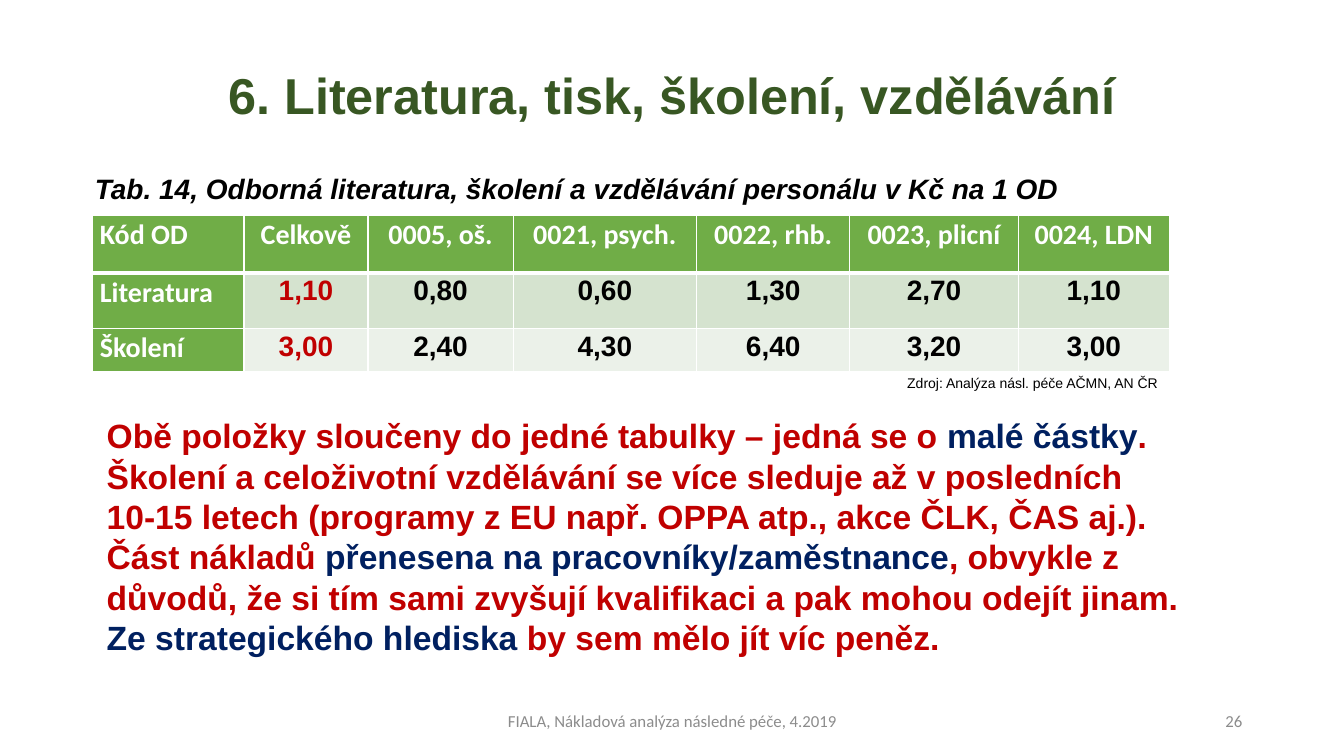
import dataclasses
import typing

import pptx
import pptx.dml.color
import pptx.enum.text
import pptx.oxml
import pptx.oxml.ns
import pptx.slide
import pptx.table
import pptx.text.text
import pptx.util

EMU_PER_PX = 9144  # 100 px to the inch
ALIGN = pptx.enum.text.PP_ALIGN
ANCHOR = pptx.enum.text.MSO_ANCHOR

COLORS = {
    "title": "385723",
    "black": "000000",
    "white": "FFFFFF",
    "red": "C00000",
    "navy": "002060",
    "grey": "8C8C8C",
    "header": "70AD47",
    "band_dark": "D5E3CF",
    "band_light": "EBF1E9",
}


@dataclasses.dataclass(frozen=True)
class Box:
    left: int
    top: int
    width: int
    height: int


@dataclasses.dataclass(frozen=True)
class Style:
    size: int
    color: str
    font: str = "Arial"
    bold: bool = False
    italic: bool = False
    align: typing.Optional[ALIGN] = ALIGN.LEFT
    line_spacing: float = 1.0


@dataclasses.dataclass(frozen=True)
class Label:
    box: Box
    text: str
    style: Style
    anchor: ANCHOR = ANCHOR.TOP
    wrap: bool = True


def px(length: int) -> pptx.util.Emu:
    return pptx.util.Emu(length * EMU_PER_PX)


def rgb(name: str) -> pptx.dml.color.RGBColor:
    return pptx.dml.color.RGBColor.from_string(COLORS[name])


def place(shape: typing.Any, box: Box) -> None:
    shape.left, shape.top = px(box.left), px(box.top)
    shape.width, shape.height = px(box.width), px(box.height)


def format_paragraph(paragraph: typing.Any, style: Style) -> None:
    paragraph.alignment = style.align
    paragraph.line_spacing = style.line_spacing
    font = paragraph.font
    font.name, font.size = style.font, pptx.util.Pt(style.size)
    font.bold, font.italic = style.bold, style.italic
    font.color.rgb = rgb(style.color)


def fill_placeholder(shape: typing.Any, label: Label) -> None:
    place(shape, label.box)
    frame = shape.text_frame
    frame.text = label.text
    frame.auto_size = pptx.enum.text.MSO_AUTO_SIZE.NONE
    frame.vertical_anchor = label.anchor
    format_paragraph(frame.paragraphs[0], label.style)


def add_text_box(slide: pptx.slide.Slide, label: Label) -> pptx.text.text.TextFrame:
    box = label.box
    shape = slide.shapes.add_textbox(px(box.left), px(box.top), px(box.width), px(box.height))
    frame = shape.text_frame
    frame.word_wrap = label.wrap
    frame.vertical_anchor = label.anchor
    frame.text = label.text
    format_paragraph(frame.paragraphs[0], label.style)
    return frame


def add_border(cell: typing.Any, side: str, points: int) -> None:
    cell._tc.get_or_add_tcPr().append(pptx.oxml.parse_xml(
        f'<a:{side} {pptx.oxml.ns.nsdecls("a")} w="{pptx.util.Pt(points)}">'
        f'<a:solidFill><a:srgbClr val="{COLORS["white"]}"/></a:solidFill></a:{side}>'))


def format_cell(cell: typing.Any, text: str, style: Style, fill: str, bottom: int) -> None:
    cell.margin_left = cell.margin_right = px(7)
    cell.margin_top = cell.margin_bottom = 0
    for side in ("lnL", "lnR", "lnT"):
        add_border(cell, side, 1)
    add_border(cell, "lnB", bottom)
    cell.fill.solid()
    cell.fill.fore_color.rgb = rgb(fill)
    cell.text = text
    format_paragraph(cell.text_frame.paragraphs[0], style)


TITLE = Label(Box(92, 40, 1150, 115), "6. Literatura, tisk, školení, vzdělávání",
              Style(36, "title", bold=True, align=ALIGN.CENTER, line_spacing=0.9), ANCHOR.MIDDLE)
CAPTION = Label(Box(84, 169, 1150, 476),
                "Tab. 14, Odborná literatura, školení a vzdělávání personálu v Kč na 1 OD",
                Style(20, "black", bold=True, italic=True, line_spacing=0.9))

TABLE_BOX = Box(92, 214, 1068, 155)
COLUMN_WIDTHS = (150, 123, 144, 182, 152, 167, 150)
ROW_HEIGHTS = (57, 55, 43)
ROW_FILLS = ("header", "band_dark", "band_light")
TABLE_ROWS = (
    ("Kód OD", "Celkově", "0005, oš.", "0021, psych.", "0022, rhb.", "0023, plicní", "0024, LDN"),
    ("Literatura", "1,10", "0,80", "0,60", "1,30", "2,70", "1,10"),
    ("Školení", "3,00", "2,40", "4,30", "6,40", "3,20", "3,00"),
)

FOOTER = Style(12, "grey", "Calibri", align=ALIGN.CENTER)
LABELS = (
    Label(Box(890, 367, 273, 27), "Zdroj: Analýza násl. péče AČMN, AN ČR",
          Style(10, "black"), wrap=False),
    Label(Box(442, 695, 450, 40), "FIALA, Nákladová analýza následné péče, 4.2019",
          FOOTER, ANCHOR.MIDDLE),
    Label(Box(942, 695, 300, 40), "26",
          dataclasses.replace(FOOTER, align=ALIGN.RIGHT), ANCHOR.MIDDLE),
)

COMMENT_BOX = Box(96, 407, 1093, 252)
COMMENT_STYLE = Style(24, "red", bold=True)
COMMENT_LINES = (
    (("Obě položky sloučeny do jedné tabulky – jedná se o ", "red"),
     ("malé částky", "navy"), (".", "red")),
    (("Školení a celoživotní vzdělávání se více sleduje až v posledních", "red"),),
    (("10-15 letech (programy z EU např. OPPA atp., akce ČLK, ČAS aj.).", "red"),),
    (("Část nákladů ", "red"), ("přenesena na pracovníky/zaměstnance", "navy"),
     (", obvykle z", "red")),
    (("důvodů, že si tím sami zvyšují kvalifikaci a pak mohou odejít jinam.", "red"),),
    (("Ze strategického hlediska", "navy"), (" by sem mělo jít víc peněz.", "red")),
)


def add_cost_table(slide: pptx.slide.Slide) -> None:
    box = TABLE_BOX
    table = slide.shapes.add_table(len(ROW_HEIGHTS), len(COLUMN_WIDTHS), px(box.left),
                                   px(box.top), px(box.width), px(box.height)).table
    for column, width in zip(table.columns, COLUMN_WIDTHS):
        column.width = px(width)
    for row, height in zip(table.rows, ROW_HEIGHTS):
        row.height = px(height)
    for i, texts in enumerate(TABLE_ROWS):
        for j, text in enumerate(texts):
            heading = i == 0 or j == 0
            color = "white" if heading else "red" if j == 1 else "black"
            style = Style(20, color, "Calibri" if heading else "Arial", bold=True,
                          align=ALIGN.CENTER if j else ALIGN.LEFT, line_spacing=1.07)
            format_cell(table.cell(i, j), text, style,
                        "header" if heading else ROW_FILLS[i], 1 if i else 3)


def add_comment(slide: pptx.slide.Slide) -> None:
    frame = add_text_box(slide, Label(COMMENT_BOX, "", COMMENT_STYLE, wrap=False))
    for i, line in enumerate(COMMENT_LINES):
        paragraph = frame.add_paragraph() if i else frame.paragraphs[0]
        format_paragraph(paragraph, COMMENT_STYLE)
        for text, color in line:
            run = paragraph.add_run()
            run.text = text
            run.font.color.rgb = rgb(color)


def main() -> None:
    presentation = pptx.Presentation()
    presentation.slide_width, presentation.slide_height = px(1333), px(750)
    slide = presentation.slides.add_slide(presentation.slide_layouts[1])

    # Title and table caption
    fill_placeholder(slide.shapes.title, TITLE)
    body = slide.placeholders[1]
    fill_placeholder(body, CAPTION)
    caption = body.text_frame.paragraphs[0]
    caption.space_before = pptx.util.Pt(10)
    properties = caption._p.get_or_add_pPr()
    properties.set("marL", "0")
    properties.set("indent", "0")
    bullet = pptx.oxml.parse_xml(f'<a:buNone {pptx.oxml.ns.nsdecls("a")}/>')
    properties.insert_element_before(bullet, "a:tabLst", "a:defRPr", "a:extLst")

    # Table, comment, source and footer
    add_cost_table(slide)
    add_comment(slide)
    for label in LABELS:
        add_text_box(slide, label)

    presentation.save("out.pptx")


if __name__ == "__main__":
    main()
